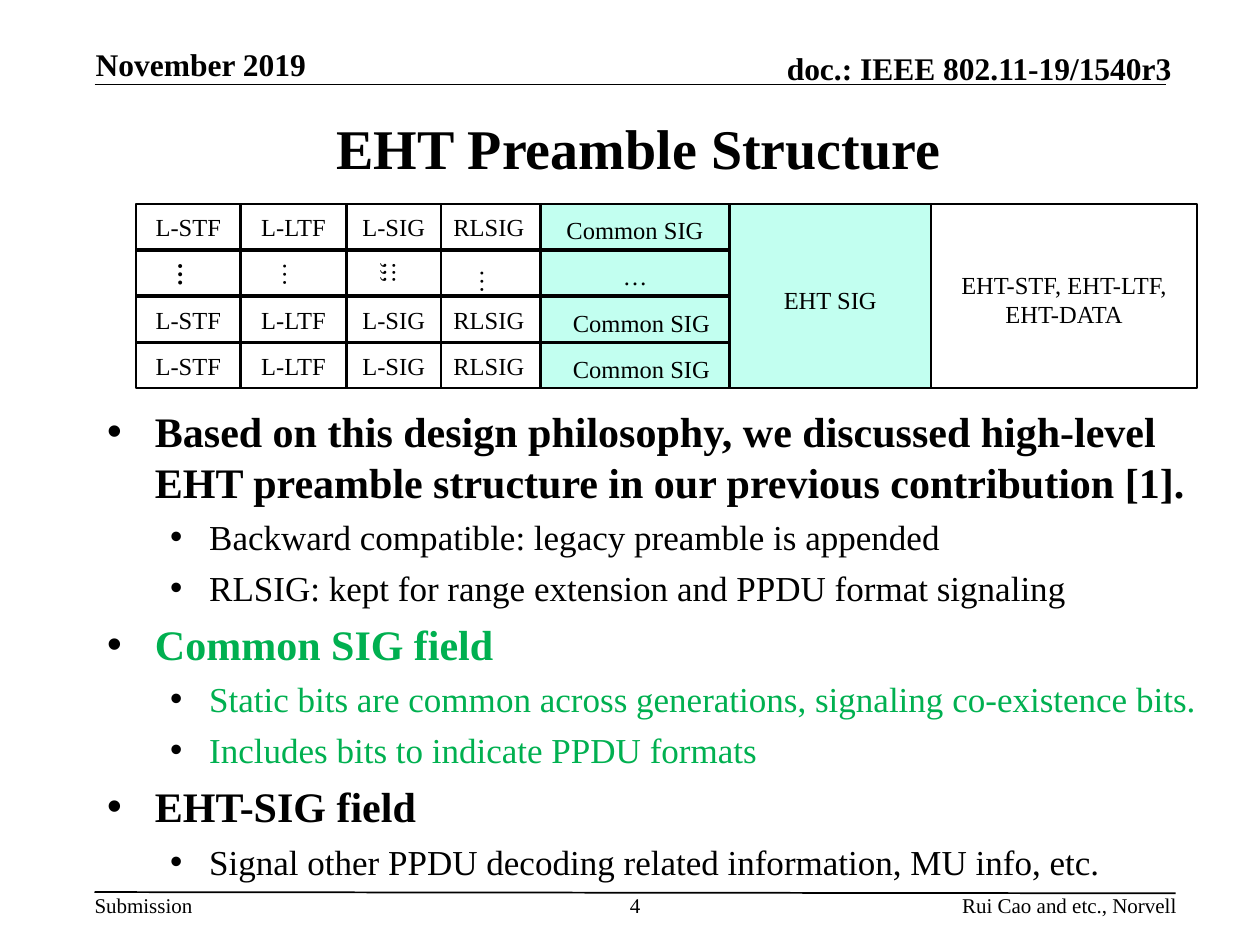
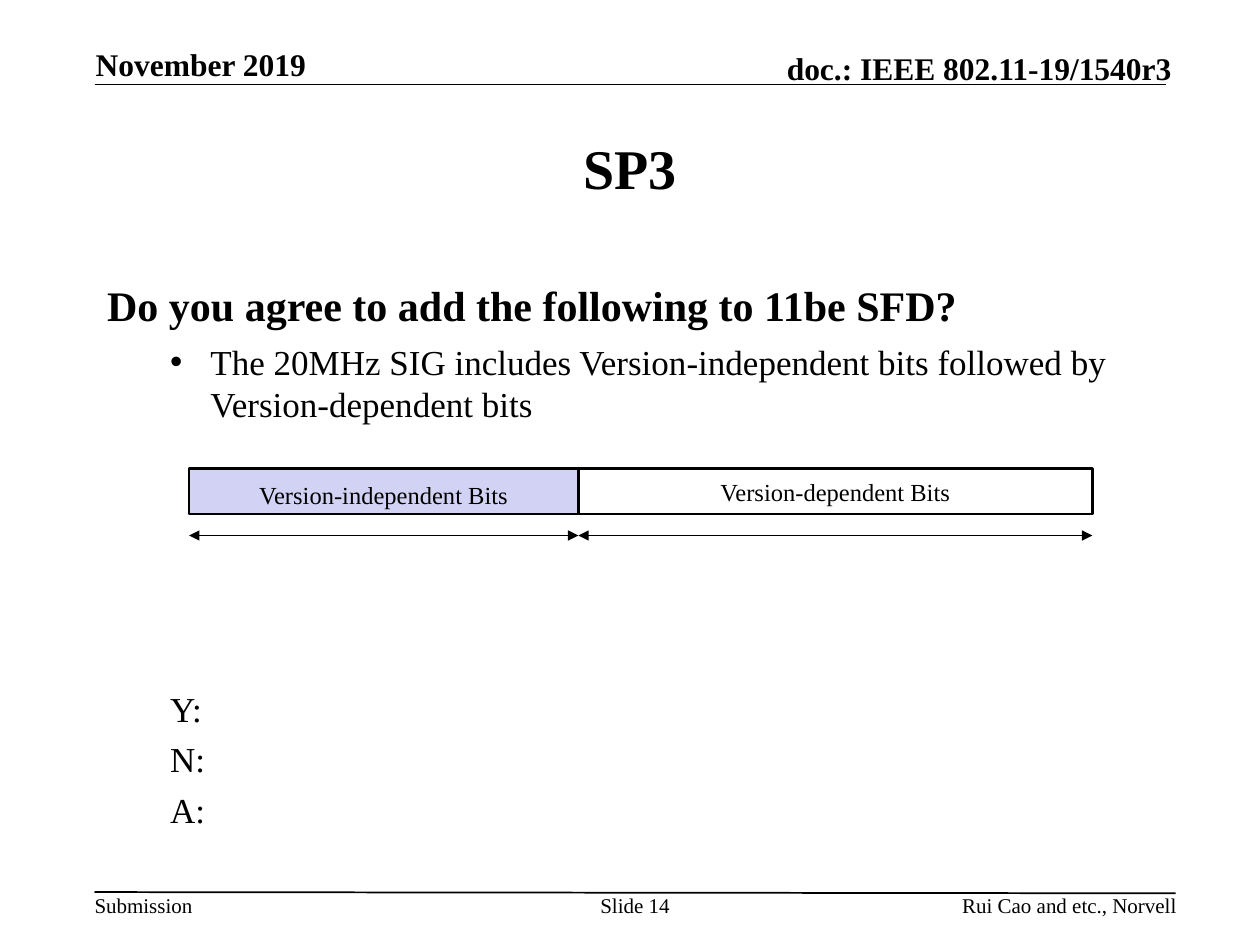
"""Build two slides on the EHT preamble and its signal field."""
import pptx
import pptx.util
import pptx.dml.color
import pptx.enum.shapes
import pptx.enum.text
import pptx.oxml.ns
import lxml.etree

FONT = "Times New Roman"
BLACK, WHITE, GREEN = "000000", "FFFFFF", "00B050"
MINT, LILAC = "C2FFF0", "D2D2F4"
PAD = (0.1, 0.05, 0.1, 0.05)
DEEP = (0.1, 0.1, 0.1, 0.05)
SHIFT = (0.2, 0.1, 0.1, 0.05)
ALIGN = pptx.enum.text.PP_ALIGN
ANCHOR = pptx.enum.text.MSO_ANCHOR

MARKS = [
    ("November 2019", (0.76, 0.36, 2.05, 0.3), "LEFT", 18),
    ("doc.: IEEE 802.11-19/1540r3", (5.47, 0.39, 3.83, 0.3), "RIGHT", 18),
    ("Submission", (0.75, 7.08, 0.78, 0.2), "LEFT", 12),
    ("Rui Cao and etc., Norvell", (5.86, 7.08, 3.48, 0.2), "RIGHT", 12),
]
RULES = [(0.75, 0.67, 9.25, 0.67), (0.75, 7.08, 9.33, 7.09)]

HEAD = dict(size=24, bold=True, before=6, indent=(0.38, -0.38))
ITEM = dict(size=20, before=5, level=1, indent=(0.81, -0.31), bullet=True)
MAIN = dict(HEAD, bullet=True)
VOTE = dict(size=20, before=5, level=1, indent=(0.5, 0))
SLIDES = [
    {
        "title": ("EHT Preamble Structure", (0.57, 0.66, 9, 1.01)),
        "page": "4",
        "area": (0.75, 3.17, 9, 3.51),
        "body": [
            ("Based on this design philosophy, we discussed high-level EHT "
             "preamble structure in our previous contribution [1].", MAIN),
            ("Backward compatible: legacy preamble is appended", ITEM),
            ("RLSIG: kept for range extension and PPDU format signaling", ITEM),
            ("Common SIG field", dict(MAIN, color=GREEN)),
            ("Static bits are common across generations, signaling "
             "co-existence bits.", dict(ITEM, color=GREEN)),
            ("Includes bits to indicate PPDU formats", dict(ITEM, color=GREEN)),
            ("EHT-SIG field", MAIN),
            ("Signal other PPDU decoding related information, MU info, etc.", ITEM),
        ],
    },
    {
        "title": ("SP3", (0.75, 0.75, 8.5, 1.16)),
        "page": "Slide 14",
        "area": (0.75, 2.17, 8.5, 4.5),
        "body": [
            ("Do you agree to add the following to 11be SFD?", HEAD),
            ("The 20MHz SIG includes Version-independent bits followed by "
             "Version-dependent bits",
             dict(ITEM, level=0, before=6, indent=(0.82, -0.32))),
            ("Y:", dict(VOTE, before=150)),
            ("N:", VOTE),
            ("A:", VOTE),
        ],
    },
]

EDGES = [1.08, 1.91, 2.75, 3.5, 4.29, 5.79, 7.39, 9.5]
TOP, PITCH, HIGH = 1.62, 0.367, 0.36
FIELDS = ["L-STF", "L-LTF", "L-SIG", "RLSIG", "Common SIG"]
DOTS = ["…", "…", ";;;", "…", "…"]
GRID = [FIELDS, DOTS, FIELDS, FIELDS]
TALL = [("EHT SIG", MINT), ("EHT-STF, EHT-LTF, EHT-DATA", WHITE)]
BITS = [("Version-independent Bits", LILAC, 1.5, 4.59, DEEP),
        ("Version-dependent Bits", WHITE, 4.59, 8.67, PAD)]


def rgb(code):
    """Turn a hex string into a colour."""
    return pptx.dml.color.RGBColor.from_string(code)


def inch(vals):
    """Turn numbers into lengths."""
    return [pptx.util.Inches(val) for val in vals]


def find(shape, tag):
    """Return the first element with this tag."""
    return shape.element.find(".//" + pptx.oxml.ns.qn(tag))


def sub(node, tag, **attrs):
    """Add a child element."""
    return lxml.etree.SubElement(node, pptx.oxml.ns.qn(tag), attrs)


def place(shape, box):
    """Move and size a shape."""
    shape.left, shape.top, shape.width, shape.height = inch(box)


def frame(shape, pad=PAD, anchor="TOP", wrap=True):
    """Set how a shape holds its text."""
    text = shape.text_frame
    text.auto_size = pptx.enum.text.MSO_AUTO_SIZE.NONE
    text.word_wrap = wrap
    text.vertical_anchor = getattr(ANCHOR, anchor)
    (text.margin_left, text.margin_top,
     text.margin_right, text.margin_bottom) = inch(pad)
    return text


def write(hold, text, size=14, bold=False, color=BLACK, align="LEFT",
          before=0, level=0, indent=(0, 0), bullet=False):
    """Add one paragraph with its format."""
    para = hold.paragraphs[0]
    if para.runs:
        para = hold.add_paragraph()
    para.alignment = getattr(ALIGN, align)
    para.level = level
    para.space_before = pptx.util.Pt(before)
    run = para.add_run()
    run.text = text
    font = run.font
    font.name, font.size, font.bold = FONT, pptx.util.Pt(size), bold
    font.color.rgb = rgb(color)
    props = para._p.get_or_add_pPr()
    left, first = inch(indent)
    props.set("marL", str(left))
    props.set("indent", str(first))
    if bullet:
        sub(sub(props, "a:buClr"), "a:srgbClr", val=BLACK)
        sub(props, "a:buChar", char="•")
    else:
        sub(props, "a:buNone")


def label(slide, text, box, anchor="TOP", **fmt):
    """Add a text box."""
    shape = slide.shapes.add_textbox(*inch(box))
    write(frame(shape, (0, 0, 0, 0), anchor), text, **fmt)


def rule(slide, ends, width=1, arrows=False):
    """Add a straight line."""
    line = slide.shapes.add_connector(
        pptx.enum.shapes.MSO_CONNECTOR.STRAIGHT, *inch(ends))
    line.line.color.rgb = rgb(BLACK)
    line.line.width = pptx.util.Pt(width)
    if arrows:
        for tag in ("a:headEnd", "a:tailEnd"):
            sub(find(line, "a:ln"), tag, type="triangle")
    sub(find(line, "p:spPr"), "a:effectLst")


def cell(slide, text, box, fill, pad=PAD, wrap=True, turn=False, **fmt):
    """Add one outlined field."""
    shape = slide.shapes.add_shape(
        pptx.enum.shapes.MSO_SHAPE.RECTANGLE, *inch(box))
    shape.shadow.inherit = False
    shape.fill.solid()
    shape.fill.fore_color.rgb = rgb(fill)
    shape.line.color.rgb = rgb(BLACK)
    shape.line.width = pptx.util.Pt(1.5)
    write(frame(shape, pad, "MIDDLE", wrap), text, **dict({"align": "CENTER"}, **fmt))
    if turn:
        find(shape, "a:bodyPr").set("vert", "eaVert")


def base(deck, data):
    """Add a slide with title, body, header and footer."""
    slide = deck.slides.add_slide(deck.slide_layouts[1])
    for ends in RULES:
        rule(slide, ends)
    for text, box, align, size in MARKS:
        big = size == 18
        label(slide, text, box, "BOTTOM" if big else "TOP",
              align=align, size=size, bold=big)
    label(slide, data["page"], (4.75, 7.08, 0.58, 0.4), align="CENTER", size=12)
    text, box = data["title"]
    title, body = slide.placeholders
    place(title, box)
    write(frame(title, anchor="MIDDLE"), text, size=32, bold=True, align="CENTER")
    place(body, data["area"])
    hold = frame(body)
    for text, fmt in data["body"]:
        write(hold, text, **fmt)
    return slide


def fields(slide):
    """Draw the preamble grid."""
    for row, names in enumerate(GRID):
        for col, text in enumerate(names):
            left, right = EDGES[col:col + 2]
            box = (left, TOP + row * PITCH, right - left, HIGH)
            dots = names is DOTS
            if col == 4:
                cell(slide, text, box, MINT, SHIFT if row > 1 else DEEP, before=6)
            else:
                last = col == 3
                cell(slide, text, box, WHITE,
                     (0.1, 0.15, 0.1, 0.05) if dots and last else PAD,
                     wrap=False, turn=dots, bold=dots and col == 0,
                     align="LEFT" if last else "CENTER")
    for col, (text, fill) in enumerate(TALL, 5):
        left, right = EDGES[col:col + 2]
        cell(slide, text, (left, TOP, right - left, 3 * PITCH + HIGH),
             fill, DEEP, before=6)


def bits(slide):
    """Draw the two bit fields with their spans."""
    for text, fill, left, right, pad in BITS:
        cell(slide, text, (left, 3.72, right - left, HIGH), fill, pad)
        rule(slide, (left, 4.25, right, 4.25), 0.75, True)


def main():
    """Build and save the deck."""
    deck = pptx.Presentation()
    deck.slide_width, deck.slide_height = inch((10, 7.5))
    for data, draw in zip(SLIDES, (fields, bits)):
        draw(base(deck, data))
    deck.save("out.pptx")


if __name__ == "__main__":
    main()
